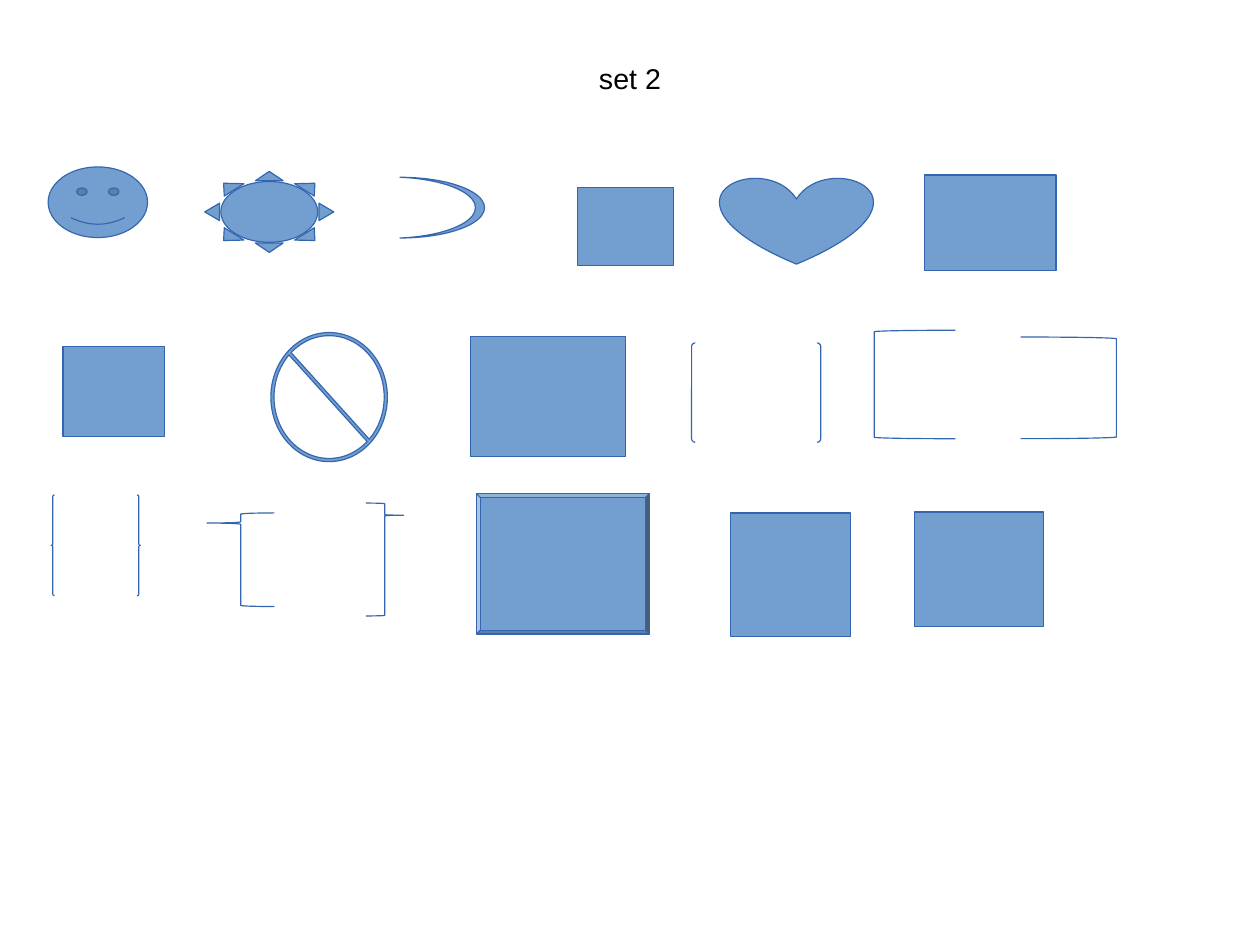
from pptx import Presentation
from pptx.dml.color import RGBColor
from pptx.enum.shapes import MSO_SHAPE
from pptx.enum.text import MSO_ANCHOR, MSO_AUTO_SIZE, PP_ALIGN
from pptx.util import Cm, Pt

BLUE = RGBColor(0x72, 0x9F, 0xCF)
DARK_BLUE = RGBColor(0x34, 0x65, 0xAF)
BLACK = RGBColor(0, 0, 0)

RECTANGLE = MSO_SHAPE.RECTANGLE
SMILEY = MSO_SHAPE.SMILEY_FACE
SUN = MSO_SHAPE.SUN
MOON = MSO_SHAPE.MOON
HEART = MSO_SHAPE.HEART
NO_SYMBOL = MSO_SHAPE.NO_SYMBOL
BRACKET_PAIR = MSO_SHAPE.DOUBLE_BRACKET
LEFT_BRACKET = MSO_SHAPE.LEFT_BRACKET
RIGHT_BRACKET = MSO_SHAPE.RIGHT_BRACKET
BRACE_PAIR = MSO_SHAPE.DOUBLE_BRACE
LEFT_BRACE = MSO_SHAPE.LEFT_BRACE
RIGHT_BRACE = MSO_SHAPE.RIGHT_BRACE
BEVEL = MSO_SHAPE.BEVEL
OUTLINE_ONLY = {BRACKET_PAIR, LEFT_BRACKET, RIGHT_BRACKET,
                BRACE_PAIR, LEFT_BRACE, RIGHT_BRACE}
MIRRORED = {MOON}

TITLE_ONLY = 5
ROWS_LEFT, ROWS_TOP, ROW_PITCH = 1, 3.71, 3.63

# Each shape: kind, x and y within its row, width, height (cm), adjustments
ROWS = [
    [(SMILEY, 0.07, 0, 2.21, 1.57, [0.175]),
     (SUN, 3.55, 0.1, 2.87, 1.8, [0.054]),
     (MOON, 7.89, 0.23, 1.88, 1.35, [0.108]),
     (RECTANGLE, 11.83, 0.46, 2.13, 1.73, []),
     (HEART, 15, 0.23, 3.4, 1.93, []),
     (RECTANGLE, 19.55, 0.18, 2.92, 2.13, [])],
    [(RECTANGLE, 0.4, 0.36, 2.26, 2.01, []),
     (NO_SYMBOL, 5.02, 0.05, 2.59, 2.87, [0.027]),
     (RECTANGLE, 9.46, 0.13, 3.45, 2.67, []),
     (BRACKET_PAIR, 14.37, 0.28, 2.87, 2.21, [0.037]),
     (LEFT_BRACKET, 18.43, 0, 1.8, 2.41, [0.018]),
     (RIGHT_BRACKET, 21.68, 0.15, 2.13, 2.26, [0.018])],
    [(BRACE_PAIR, 0.14, 0.03, 1.98, 2.24, [0.018]),
     (LEFT_BRACE, 3.6, 0.43, 1.5, 2.08, [0.018, 0.108]),
     (RIGHT_BRACE, 7.13, 0.21, 0.84, 2.51, [0.018, 0.108]),
     (BEVEL, 9.59, 0, 3.84, 3.12, [0.027]),
     (RECTANGLE, 15.23, 0.43, 2.67, 2.74, []),
     (RECTANGLE, 19.32, 0.41, 2.87, 2.54, [])],
]


def write_text(shape, text, size=18, color=BLACK, font="Arial",
               align=PP_ALIGN.CENTER, anchor=MSO_ANCHOR.MIDDLE):
    frame = shape.text_frame
    frame.word_wrap = True
    frame.auto_size = MSO_AUTO_SIZE.NONE
    frame.vertical_anchor = anchor
    frame.margin_left = frame.margin_right = 0
    frame.margin_top = frame.margin_bottom = 0
    paragraph = frame.paragraphs[0]
    paragraph.alignment = align
    run = paragraph.add_run()
    run.text = text
    run.font.size = Pt(size)
    run.font.name = font
    run.font.color.rgb = color


def place_title(slide, text, left, top, width, height):
    title = slide.shapes.title
    title.left, title.top = Cm(left), Cm(top)
    title.width, title.height = Cm(width), Cm(height)
    write_text(title, text)


def add_symbol(slide, kind, left, top, width, height, adjustments):
    shape = slide.shapes.add_shape(kind, Cm(left), Cm(top), Cm(width), Cm(height))
    for index, value in enumerate(adjustments):
        shape.adjustments[index] = value
    shape.shadow.inherit = False
    if kind in OUTLINE_ONLY:
        shape.fill.background()
    else:
        shape.fill.solid()
        shape.fill.fore_color.rgb = BLUE
    shape.line.color.rgb = DARK_BLUE
    shape.line.width = Pt(0.75)
    if kind in MIRRORED:
        shape._element.spPr.xfrm.set("flipH", "1")


def add_symbol_row(slide, symbols, left, top):
    for kind, x, y, width, height, adjustments in symbols:
        add_symbol(slide, kind, left + x, top + y, width, height, adjustments)


def main():
    presentation = Presentation()
    presentation.slide_width, presentation.slide_height = Cm(28), Cm(21)
    slide = presentation.slides.add_slide(presentation.slide_layouts[TITLE_ONLY])

    # Title
    place_title(slide, "set 2", 1.4, 0.84, 25.2, 1.8)

    # Rows of preset shapes
    for number, symbols in enumerate(ROWS):
        add_symbol_row(slide, symbols, ROWS_LEFT, ROWS_TOP + number * ROW_PITCH)

    presentation.save("out.pptx")


if __name__ == "__main__":
    main()
